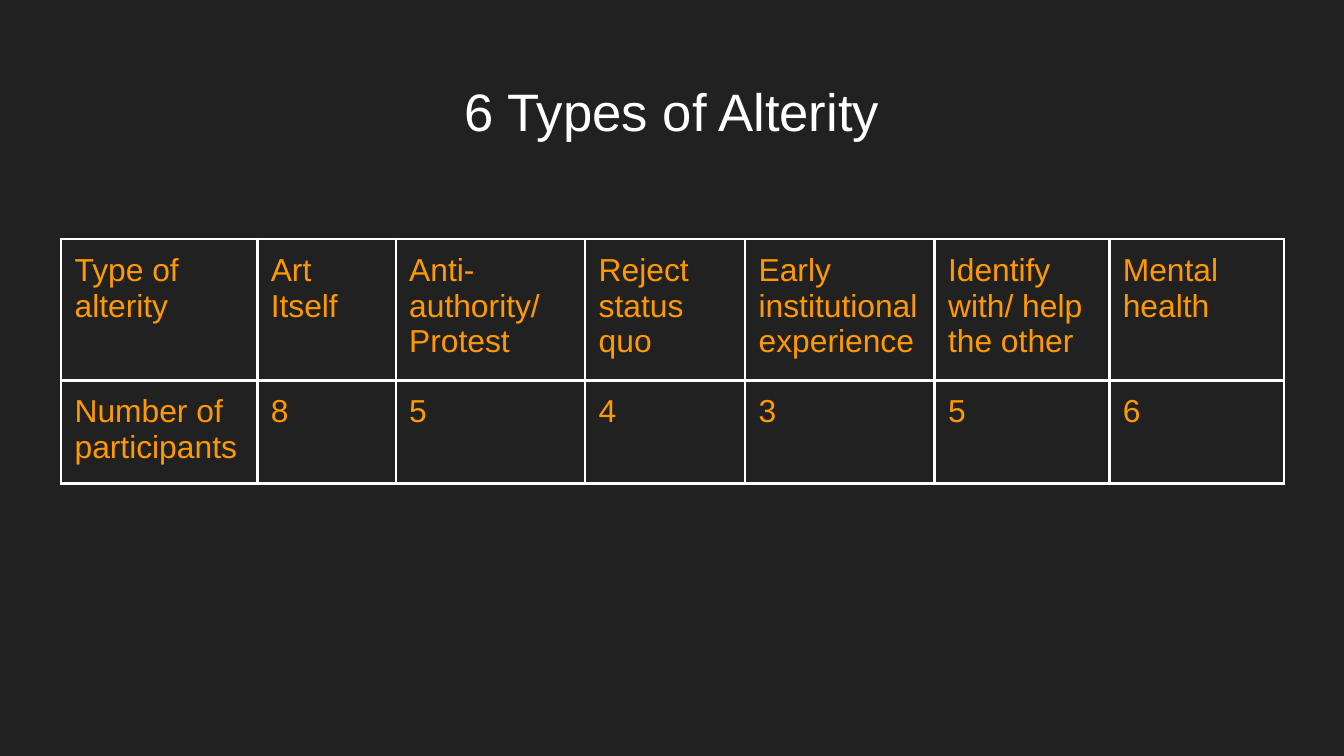
import dataclasses

import pptx
import pptx.dml.color
import pptx.enum.text
import pptx.oxml
import pptx.oxml.ns
import pptx.util


@dataclasses.dataclass(frozen=True)
class Theme:
    background: str = "212121"
    title_color: str = "FFFFFF"
    table_color: str = "FF9900"
    border_color: str = "FFFFFF"
    border_width: float = 1.5
    font: str = "Arial"
    title_size: float = 28.2
    table_size: float = 17


def rgb(color):
    return pptx.dml.color.RGBColor.from_string(color)


def write_text(frame, text, *, font, size, color, align=None):
    """Fill a text frame, one paragraph for each line of text."""
    frame.word_wrap = True
    for index, line in enumerate(text.split("\n")):
        paragraph = frame.add_paragraph() if index else frame.paragraphs[0]
        paragraph.alignment = align
        run = paragraph.add_run()
        run.text = line
        run.font.name = font
        run.font.size = pptx.util.Pt(size)
        run.font.color.rgb = rgb(color)


class SlideBuilder:
    """Lengths are units of a square grid, 100 columns across the slide."""

    def __init__(self, presentation, theme):
        self.theme = theme
        self.unit = presentation.slide_width / 100
        self.inset = self.grid(1)
        self.slide = presentation.slides.add_slide(presentation.slide_layouts[6])
        fill = self.slide.background.fill
        fill.solid()
        fill.fore_color.rgb = rgb(theme.background)

    def grid(self, *lengths):
        """Turn grid units into slide lengths; a single one comes back bare."""
        sizes = [pptx.util.Emu(round(length * self.unit)) for length in lengths]
        return sizes[0] if len(sizes) == 1 else sizes

    def set_margins(self, holder):
        holder.margin_left = holder.margin_right = self.inset
        holder.margin_top = holder.margin_bottom = self.inset

    def title(self, text, left, top, width, height):
        shape = self.slide.shapes.add_textbox(*self.grid(left, top, width, height))
        self.set_margins(shape.text_frame)
        write_text(shape.text_frame, text, font=self.theme.font,
                   size=self.theme.title_size, color=self.theme.title_color,
                   align=pptx.enum.text.PP_ALIGN.CENTER)

    def table(self, rows, left, top, widths, heights):
        shape = self.slide.shapes.add_table(
            len(heights), len(widths),
            *self.grid(left, top, sum(widths), sum(heights)))
        table = shape.table
        table.first_row = table.horz_banding = False
        for column, width in zip(table.columns, widths):
            column.width = self.grid(width)
        for row, height, texts in zip(table.rows, heights, rows):
            row.height = self.grid(height)
            for cell, text in zip(row.cells, texts):
                self.cell(cell, text)

    def cell(self, cell, text):
        self.set_margins(cell)
        write_text(cell.text_frame, text, font=self.theme.font,
                   size=self.theme.table_size, color=self.theme.table_color)
        self.borders(cell)
        cell.fill.background()

    def borders(self, cell):
        properties = cell._tc.get_or_add_tcPr()
        width = pptx.util.Pt(self.theme.border_width)
        for side in ("lnL", "lnR", "lnT", "lnB"):
            properties.append(pptx.oxml.parse_xml(
                f'<a:{side} {pptx.oxml.ns.nsdecls("a")} w="{width}"><a:solidFill>'
                f'<a:srgbClr val="{self.theme.border_color}"/>'
                f'</a:solidFill></a:{side}>'))


def main():
    presentation = pptx.Presentation()
    presentation.slide_width = pptx.util.Inches(10)
    presentation.slide_height = presentation.slide_width * 9 // 16

    participants_by_type = {
        "Art Itself": 8,
        "Anti-\nauthority/\nProtest": 5,
        "Reject status quo": 4,
        "Early institutional experience": 3,
        "Identify with/ help the other": 5,
        "Mental health": 6,
    }
    rows = [
        ["Type of alterity", *participants_by_type],
        ["Number of participants", *map(str, participants_by_type.values())],
    ]

    builder = SlideBuilder(presentation, Theme())
    builder.title("6 Types of Alterity", left=3.4, top=4.9, width=93.2, height=6.3)
    builder.table(rows, left=4.55, top=17.8,
                  widths=[14.6, 10.3, 14.1, 11.9, 14.1, 13, 13],
                  heights=[9, 6.7])
    presentation.save("out.pptx")


if __name__ == "__main__":
    main()
